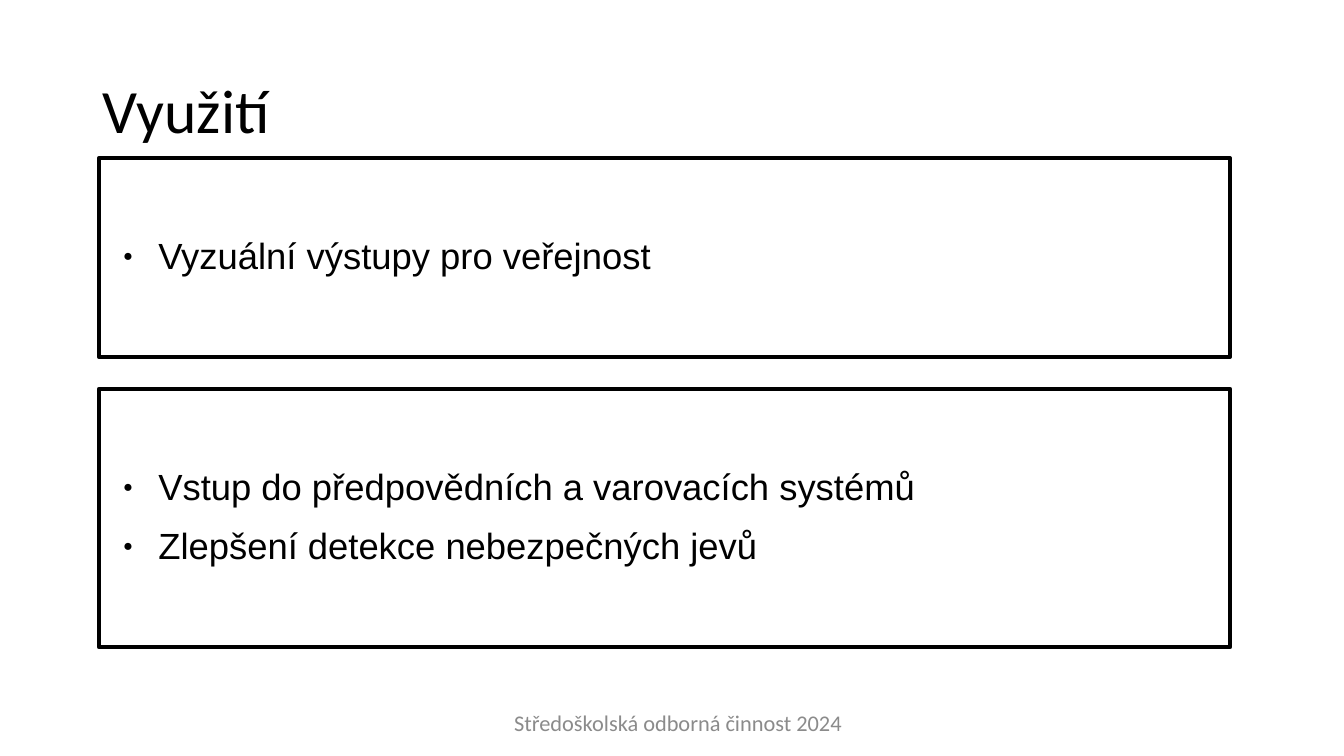
from lxml import etree
from pptx import Presentation
from pptx.dml.color import RGBColor
from pptx.enum.shapes import MSO_SHAPE
from pptx.enum.text import MSO_ANCHOR, PP_ALIGN
from pptx.oxml.ns import qn
from pptx.util import Emu, Pt

RECTANGLE = MSO_SHAPE.RECTANGLE
MIDDLE = MSO_ANCHOR.MIDDLE
LEFT, CENTER = PP_ALIGN.LEFT, PP_ALIGN.CENTER

BLACK = RGBColor(0x00, 0x00, 0x00)
GREY = RGBColor(0x8B, 0x8B, 0x8B)

EMU_PER_PX = 9144  # 100 px to the inch


def px(length):
    return Emu(length * EMU_PER_PX)


def add_bullet(paragraph):
    """Hanging indent with a small round bullet."""
    properties = paragraph._p.get_or_add_pPr()
    properties.set("marL", str(px(47)))
    properties.set("indent", str(px(-35)))
    color = etree.SubElement(properties, qn("a:buClr"))
    etree.SubElement(color, qn("a:srgbClr"), val=str(BLACK))
    etree.SubElement(properties, qn("a:buSzPct"), val="45000")
    etree.SubElement(properties, qn("a:buFont"), typeface="Arial")
    etree.SubElement(properties, qn("a:buChar"), char="●")


def write(paragraph, text, font="Calibri", size=16, color=BLACK,
          align=LEFT, line_spacing=1.0, space_before=0, bullet=False):
    if bullet:
        add_bullet(paragraph)
    paragraph.alignment = align
    paragraph.line_spacing = line_spacing
    paragraph.space_before = Pt(space_before)
    run = paragraph.add_run()
    run.text = text
    run.font.name = font
    run.font.size = Pt(size)
    run.font.color.rgb = color


class SlideBuilder:
    def __init__(self, slide):
        self.slide = slide
        self.bullet_style = dict(font="Arial", size=26, line_spacing=0.9, bullet=True)

    def text(self, left, top, width, height, text, wrap=True, **style):
        box = self.slide.shapes.add_textbox(px(left), px(top), px(width), px(height))
        frame = box.text_frame
        frame.word_wrap = wrap
        frame.vertical_anchor = MIDDLE
        write(frame.paragraphs[0], text, **style)

    def bullet_box(self, left, top, width, height, items):
        box = self.slide.shapes.add_shape(
            RECTANGLE, px(left), px(top), px(width), px(height))
        box.shadow.inherit = False
        box.fill.background()
        box.line.color.rgb = BLACK
        box.line.width = Pt(3)
        frame = box.text_frame
        frame.word_wrap = True
        frame.vertical_anchor = MIDDLE
        frame.margin_left = frame.margin_right = px(12)
        frame.margin_top = frame.margin_bottom = px(7)
        for index, item in enumerate(items):
            paragraph = frame.add_paragraph() if index else frame.paragraphs[0]
            write(paragraph, item, space_before=14.2 if index else 0,
                  **self.bullet_style)


def main():
    presentation = Presentation()
    presentation.slide_width = px(1333)
    presentation.slide_height = px(750)
    builder = SlideBuilder(
        presentation.slides.add_slide(presentation.slide_layouts[6]))

    # Title
    builder.text(92, 40, 1150, 145, "Využití", size=44, line_spacing=0.9)

    # Framed lists
    builder.bullet_box(98, 157, 1122, 197, ["Vyzuální výstupy pro veřejnost"])
    builder.bullet_box(98, 386, 1122, 256, [
        "Vstup do předpovědních a varovacích systémů",
        "Zlepšení detekce nebezpečných jevů",
    ])

    # Footer
    builder.text(499, 697, 347, 40, "Středoškolská odborná činnost 2024",
                 wrap=False, color=GREY, align=CENTER)

    presentation.save("out.pptx")


if __name__ == "__main__":
    main()
